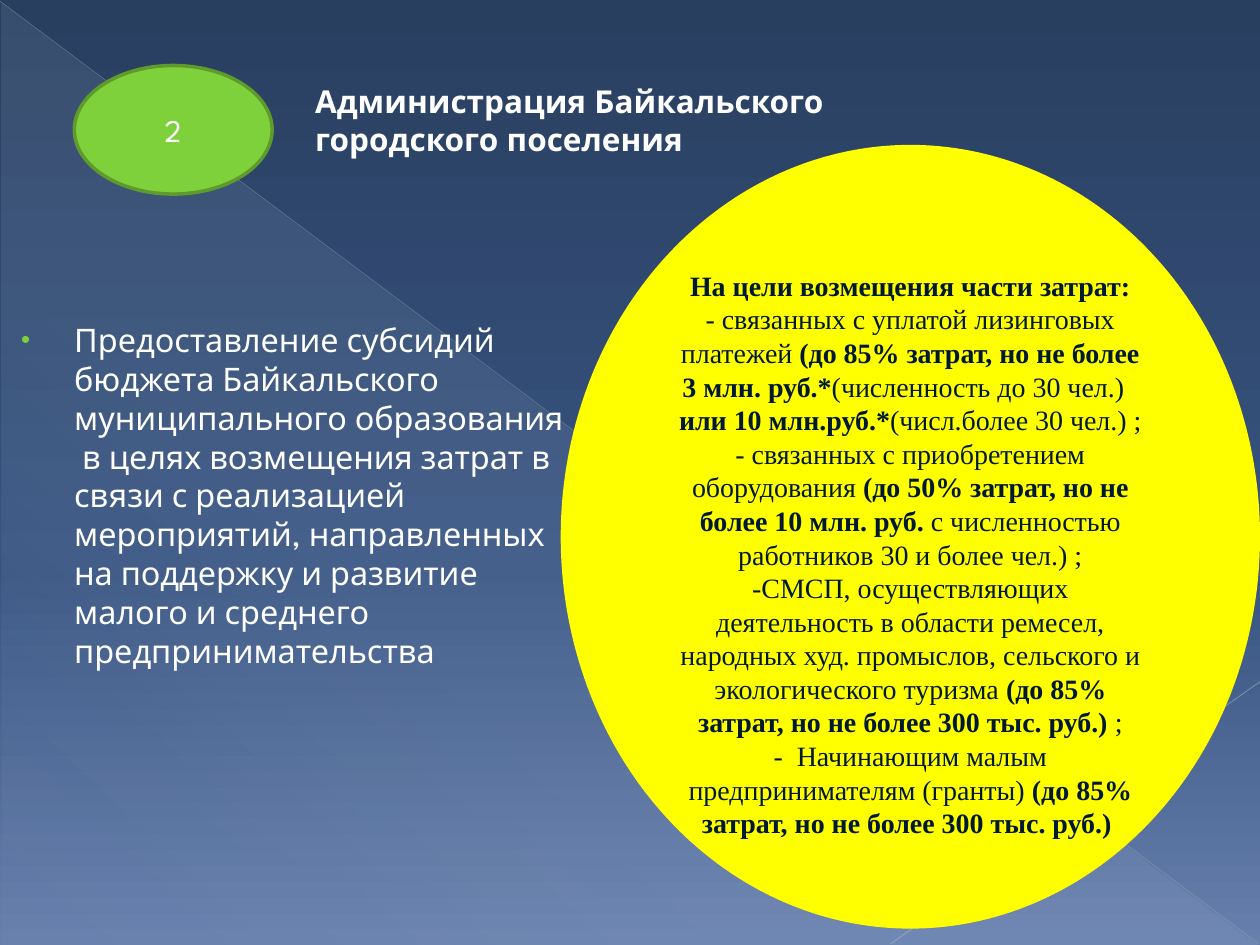
import pptx
import pptx.util
import pptx.oxml
import pptx.oxml.ns
import pptx.dml.color
import pptx.enum.text
import pptx.enum.shapes
import lxml.etree

Inches = pptx.util.Inches
Pt = pptx.util.Pt
qn = pptx.oxml.ns.qn
Align = pptx.enum.text.PP_ALIGN
Anchor = pptx.enum.text.MSO_ANCHOR
Kind = pptx.enum.shapes.MSO_SHAPE

SANS, SERIF = "League Spartan", "Times New Roman"
HUES = {"white": "FFFFFF", "ink": "00192F", "green": "7FD13B",
        "rim": "5E9B2C", "yellow": "FFFF00"}

TITLE = [[("Администрация Байкальского городского поселения", True)]]
NUMBER = [[("2", False)]]
BODY = [[("Предоставление субсидий бюджета Байкальского муниципального образования  "
          "в целях возмещения затрат в связи с реализацией мероприятий, направленных "
          "на поддержку и развитие малого и среднего предпринимательства", False)]]
GOALS = [
    [("На цели возмещения части затрат:", True)],
    [("- связанных с уплатой лизинговых платежей ", False),
     ("(до 85% затрат, но не более 3 млн. руб.*", True),
     ("(численность до 30 чел.)   ", False),
     ("или 10 млн.руб.*", True),
     ("(числ.более 30 чел.) ;", False)],
    [("- связанных с приобретением оборудования ", False),
     ("(до 50% затрат, но не более 10 млн. руб. ", True),
     ("с численностью работников 30 и более чел.) ;", False)],
    [("-СМСП, осуществляющих деятельность в области ремесел, народных худ. "
      "промыслов, сельского и экологического туризма ", False),
     ("(до 85% затрат, но не более 300 тыс. руб.) ", True),
     (";", False)],
    [("-  Начинающим малым предпринимателям (гранты) ", False),
     ("(до 85% затрат, но не более 300 тыс. руб.) ", True)],
]
SKY = [(0, "293F60", 100), (60, "375380", 100), (100, "667FAC", 100)]
GLOW = [(0, "D6ECFF", 10), (70, "D6ECFF", 8), (100, "D6ECFF", 1)]
RAYS = [((0, 0.01), (9.99, 7.49), "B7BCC5", 0.39, 35),
        ((10, 5.41), (7.07, 7.49), "BFC3CB", 0.47, 45)]


def rgb(hue):
    return pptx.dml.color.RGBColor.from_string(HUES.get(hue, hue))


def add(node, tag, **attrs):
    return lxml.etree.SubElement(node, qn(tag), {k: str(v) for k, v in attrs.items()})


def fade(node, share):
    add(node, "a:alpha", val=share * 1000)


def blend(owner, stops, angle):
    old = owner.find(qn("a:solidFill"))
    grad = lxml.etree.Element(qn("a:gradFill"), rotWithShape="1")
    row = add(grad, "a:gsLst")
    for pos, hue, share in stops:
        stop = add(row, "a:gs", pos=pos * 1000)
        fade(add(stop, "a:srgbClr", val=hue), share)
    add(grad, "a:lin", ang=angle * 60000, scaled=0)
    owner.replace(old, grad)


def place(item, box):
    item.left, item.top, item.width, item.height = map(Inches, box)


def write(item, paras, size, face, hue, align=Align.LEFT, anchor=Anchor.TOP):
    frame = item.text_frame
    frame.word_wrap = True
    frame.auto_size = pptx.enum.text.MSO_AUTO_SIZE.NONE
    frame.vertical_anchor = anchor
    for i, runs in enumerate(paras):
        para = frame.add_paragraph() if i else frame.paragraphs[0]
        para.alignment = align
        for text, bold in runs:
            run = para.add_run()
            run.text = text
            font = run.font
            font.size, font.name, font.bold = Pt(size), face, bold
            font.color.rgb = rgb(hue)
    return frame


def shape(kind, box, hue, rim=None):
    item = slide.shapes.add_shape(kind, *map(Inches, box))
    item.shadow.inherit = False
    item.fill.solid()
    item.fill.fore_color.rgb = rgb(hue)
    if rim:
        item.line.color.rgb = rgb(rim)
        item.line.width = Pt(2)
    else:
        item.line.fill.background()
    return item


deck = pptx.Presentation()
deck.slide_width, deck.slide_height = Inches(10), Inches(7.5)
slide = deck.slides.add_slide(deck.slide_layouts[5])

slide.background.fill.solid()
blend(slide.element.find(".//" + qn("p:bgPr")), SKY, 90)
wedge = shape(Kind.RIGHT_TRIANGLE, (0.01, 0.02, 9.98, 7.48), "white")
blend(wedge.element.spPr, GLOW, 133)

for start, end, hue, width, share in RAYS:
    ray = slide.shapes.add_connector(pptx.enum.shapes.MSO_CONNECTOR.STRAIGHT,
                                     *map(Inches, start + end))
    ray.line.color.rgb = rgb(hue)
    ray.line.width = Pt(width)
    props = ray.element.spPr
    fade(props.find(".//" + qn("a:srgbClr")), share)
    add(props, "a:effectLst")

body = slide.shapes.add_textbox(*map(Inches, (0, 2.49, 4.61, 2.71)))
para = write(body, BODY, 18.5, SANS, "white").paragraphs[0]
para.space_before = Pt(3.7)
props = para._p.get_or_add_pPr()
props.set("marL", str(Inches(0.59 - 0.1)))
props.set("indent", str(Inches(-0.42)))
add(add(props, "a:buClr"), "a:srgbClr", val=HUES["green"])
add(props, "a:buSzPct", val=80000)
add(props, "a:buFont", typeface="Arial")
add(props, "a:buChar", char="•")

title = slide.shapes.title
place(title, (2.4, 0.6, 5.04, 1.01))
write(title, TITLE, 18, SANS, "white")

badge = shape(Kind.OVAL, (0.59, 0.52, 1.57, 1.02), "green", "rim")
write(badge, NUMBER, 18, SANS, "white", Align.CENTER, Anchor.MIDDLE)

disc = shape(Kind.OVAL, (4.45, 1.15, 5.55, 6.22), "yellow")
frame = write(disc, GOALS, 16, SERIF, "ink", Align.CENTER, Anchor.MIDDLE)
frame.margin_top, frame.margin_bottom = Inches(0.32), Inches(0.05)

deck.save("out.pptx")
